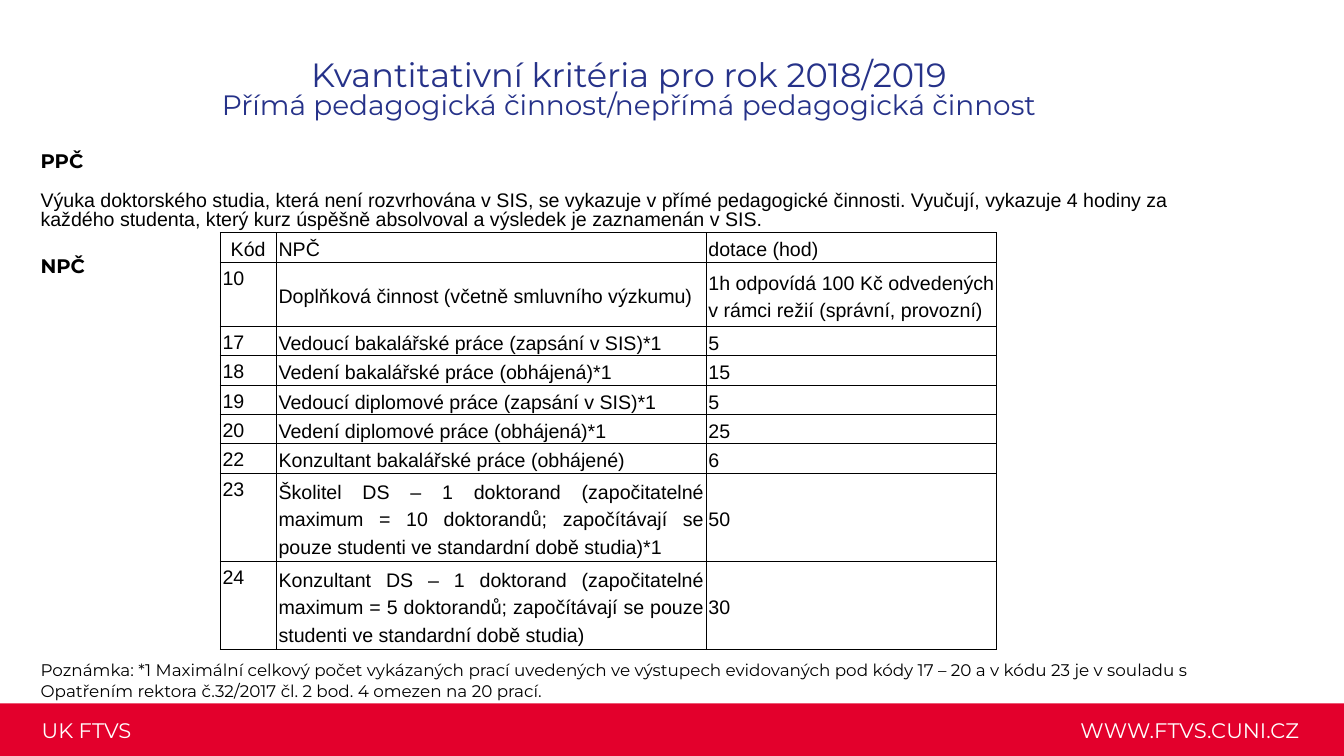
"""Build the slide with the teaching-activity criteria for 2018/2019."""
from dataclasses import dataclass

from lxml.etree import SubElement
from pptx import Presentation
from pptx.dml.color import RGBColor
from pptx.enum.shapes import MSO_SHAPE
from pptx.enum.text import MSO_ANCHOR as Anchor, MSO_AUTO_SIZE as AutoSize, PP_ALIGN as Align
from pptx.oxml.ns import qn
from pptx.util import Pt


@dataclass(frozen=True)
class Theme:
    """Colours, fonts and type sizes of the slide."""
    red: str = "E3002C"
    blue: str = "263289"
    black: str = "000000"
    white: str = "FFFFFF"
    heading_font: str = "Montserrat"
    text_font: str = "Arial"
    title: int = 48
    subtitle: int = 40
    footer: int = 30
    text: int = 28
    note: int = 24


THEME = Theme()
COLUMNS = (80, 614, 415)
ROWS = (
    (42, "Kód", "NPČ", "dotace (hod)"),
    (91.5, "10", "Doplňková činnost (včetně smluvního výzkumu)",
     "1h odpovídá 100 Kč odvedených v rámci režií (správní, provozní)"),
    (42, "17", "Vedoucí bakalářské práce (zapsání v SIS)*1", "5"),
    (42, "18", "Vedení bakalářské práce (obhájená)*1", "15"),
    (42, "19", "Vedoucí diplomové práce (zapsání v SIS)*1", "5"),
    (42, "20", "Vedení diplomové práce (obhájená)*1", "25"),
    (42, "22", "Konzultant bakalářské práce (obhájené)", "6"),
    (126, "23", "Školitel DS – 1 doktorand (započitatelné maximum = 10 doktorandů; "
     "započítávají se pouze studenti ve standardní době studia)*1", "50"),
    (126, "24", "Konzultant DS – 1 doktorand (započitatelné maximum = 5 doktorandů; "
     "započítávají se pouze studenti ve standardní době studia)", "30"),
)
TEACHING = ("Výuka doktorského studia, která není rozvrhována v SIS, se vykazuje "
            "v přímé pedagogické činnosti. Vyučují, vykazuje 4 hodiny za každého studenta, "
            "který kurz úspěšně absolvoval a výsledek je zaznamenán v SIS.")
NOTE = ("Poznámka: *1 Maximální celkový počet vykázaných prací uvedených ve výstupech "
        "evidovaných pod kódy 17 – 20 a v kódu 23 je v souladu s Opatřením rektora "
        "č.32/2017 čl. 2 bod. 4 omezen na 20 prací.")


def write(paragraph, text, *, size=THEME.text, font=THEME.heading_font, color=THEME.black,
          bold=False, align=Align.LEFT, spacing=1.0, before=0):
    """Put formatted text into a paragraph."""
    paragraph.alignment = align
    paragraph.line_spacing = spacing
    paragraph.space_before = Pt(before)
    run = paragraph.add_run()
    run.text = text
    run.font.name = font
    run.font.size = Pt(size)
    run.font.bold = bold
    run.font.color.rgb = RGBColor.from_string(color)


def format_frame(frame, anchor=Anchor.MIDDLE):
    """Set wrapping, anchor and margins of a text frame and return it."""
    frame.word_wrap = True
    frame.auto_size = AutoSize.NONE
    frame.vertical_anchor = anchor
    frame.margin_left = frame.margin_right = Pt(4)
    frame.margin_top = frame.margin_bottom = Pt(4)
    return frame


def add_text_box(slide, left, top, width, height, anchor=Anchor.MIDDLE):
    """Add an empty text box and return its frame."""
    box = slide.shapes.add_textbox(Pt(left), Pt(top), Pt(width), Pt(height))
    return format_frame(box.text_frame, anchor)


def add_footer(slide):
    """Add the red band with the faculty name and web address."""
    band = slide.shapes.add_shape(MSO_SHAPE.RECTANGLE, Pt(-2), Pt(1005), Pt(1924), Pt(76))
    band.shadow.inherit = False
    band.fill.solid()
    band.fill.fore_color.rgb = RGBColor.from_string(THEME.red)
    band.line.fill.background()
    for left, text, align in ((1351, "WWW.FTVS.CUNI.CZ", Align.RIGHT),
                              (55.5, "UK FTVS", Align.LEFT)):
        frame = add_text_box(slide, left, 1021, 509, 44)
        write(frame.paragraphs[0], text, size=THEME.footer, color=THEME.white, align=align)


def set_title(slide):
    """Place the title placeholder and write its two lines."""
    title = slide.shapes.title
    title.left, title.top, title.width, title.height = Pt(90), Pt(84), Pt(1617), Pt(94)
    frame = format_frame(title.text_frame)
    style = dict(color=THEME.blue, align=Align.CENTER, spacing=0.8)
    write(frame.paragraphs[0], "Kvantitativní kritéria pro rok 2018/2019",
          size=THEME.title, **style)
    write(frame.add_paragraph(), "Přímá pedagogická činnost/nepřímá pedagogická činnost",
          size=THEME.subtitle, **style)


def add_body(slide):
    """Add the section labels, teaching rule and note around the table."""
    frame = add_text_box(slide, 54, 209, 1703, 828, Anchor.TOP)
    write(frame.paragraphs[0], "PPČ", bold=True)
    write(frame.add_paragraph(), TEACHING, font=THEME.text_font, spacing=0.8, before=29)
    write(frame.add_paragraph(), "NPČ", bold=True, before=34)
    write(frame.add_paragraph(), NOTE, size=THEME.note, before=546)


def set_borders(cell):
    """Draw a thin black line on every side of a cell."""
    properties = cell._tc.get_or_add_tcPr()
    for side in ("lnL", "lnR", "lnT", "lnB"):
        line = SubElement(properties, qn(f"a:{side}"), w=str(Pt(1)))
        fill = SubElement(line, qn("a:solidFill"))
        SubElement(fill, qn("a:srgbClr"), val=THEME.black)


def format_cell(cell, text, align, anchor):
    """Write one table cell with its borders and margins."""
    set_borders(cell)
    cell.fill.background()
    cell.vertical_anchor = anchor
    cell.margin_left = cell.margin_right = Pt(3.5)
    cell.margin_top = cell.margin_bottom = 0
    write(cell.text_frame.paragraphs[0], text, font=THEME.text_font, align=align, spacing=1.25)


def add_criteria_table(slide):
    """Add the table of codes, activities and hours."""
    height = sum(row[0] for row in ROWS)
    table = slide.shapes.add_table(len(ROWS), len(COLUMNS), Pt(314.5), Pt(332.5),
                                   Pt(sum(COLUMNS)), Pt(height)).table
    table.first_row = table.horz_banding = False
    for column, width in zip(table.columns, COLUMNS):
        column.width = Pt(width)
    for row_index, (row_height, *texts) in enumerate(ROWS):
        table.rows[row_index].height = Pt(row_height)
        for column_index, text in enumerate(texts):
            is_code = column_index == 0
            is_header = row_index == 0
            align = Align.CENTER if is_code and is_header else Align.JUSTIFY
            anchor = Anchor.TOP if is_code and not is_header else Anchor.MIDDLE
            format_cell(table.cell(row_index, column_index), text, align, anchor)


def main():
    """Build and save the presentation."""
    presentation = Presentation()
    presentation.slide_width, presentation.slide_height = Pt(1920), Pt(1080)
    slide = presentation.slides.add_slide(presentation.slide_layouts[5])
    add_footer(slide)
    set_title(slide)
    add_body(slide)
    add_criteria_table(slide)
    presentation.save("out.pptx")


if __name__ == "__main__":
    main()
